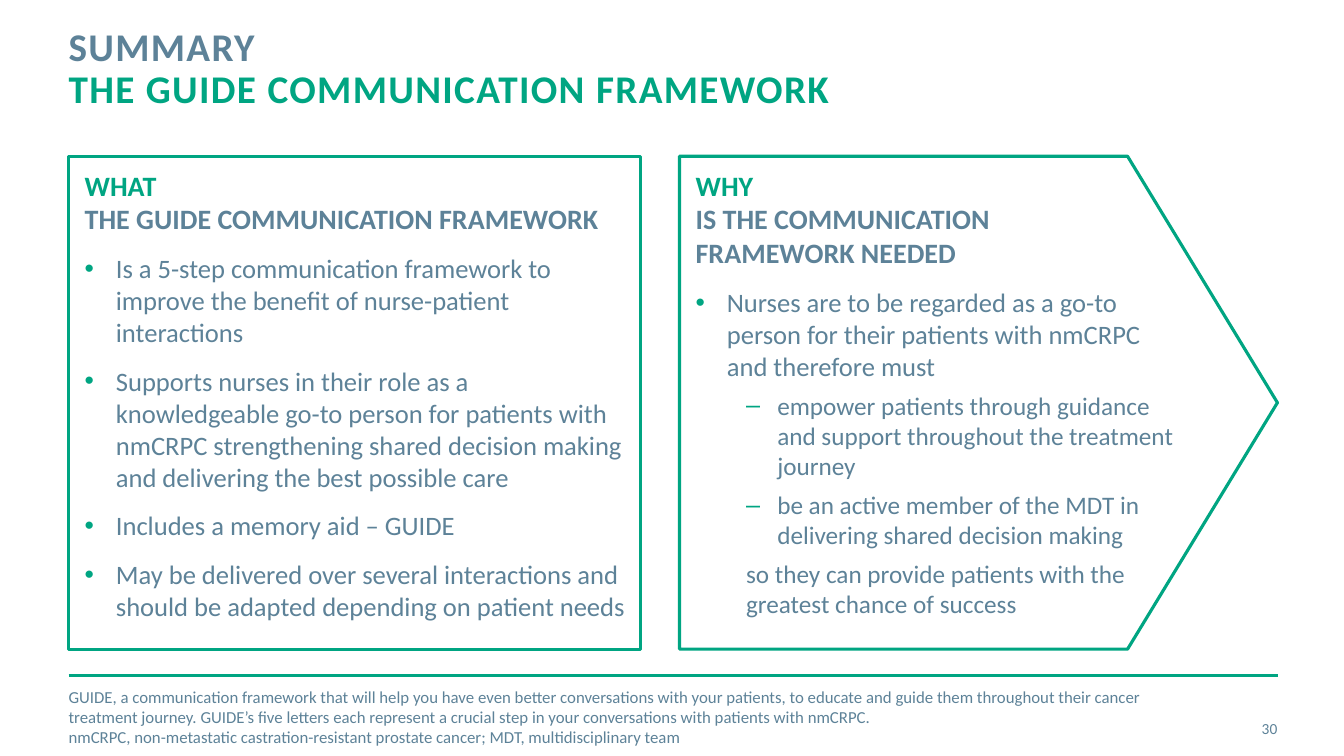
"""Build the summary slide of the GUIDE communication framework."""
from dataclasses import dataclass
from typing import Optional

from lxml import etree
from pptx import Presentation
from pptx import util as u
from pptx.dml.color import RGBColor
from pptx.enum import shapes, text
from pptx.oxml import ns

GREEN, SLATE, WHITE = "00A582", "5D8298", "FFFFFF"
FONT = "Calibri"


@dataclass
class Para:
    words: str
    size: float
    level: int = 0
    left: float = 0
    hang: float = 0
    before: float = 0
    mark: str = ""
    lead: str = ""
    bold: bool = False
    pitch: Optional[float] = None
    track: int = 0
    align: text.PP_ALIGN = text.PP_ALIGN.LEFT


@dataclass
class Box:
    left: float
    top: float
    width: float
    height: float
    pads: tuple[float, float, float, float] = (0, 0, 0, 0)
    anchor: text.MSO_ANCHOR = text.MSO_ANCHOR.TOP


def paint(target, code: str) -> None:
    if hasattr(target, "solid"):
        target.solid()
        target = target.fore_color
    else:
        target = target.color
    target.rgb = RGBColor.from_string(code)


def tag(parent, name: str, **attrs: str):
    return etree.SubElement(parent, ns.qn(name), attrs)


def write_lines(para, words: str, code: str, track: int) -> None:
    for index, line in enumerate(words.split("\n")):
        if index:
            para.add_line_break()
        run = para.add_run()
        run.text = line
        if code:
            paint(run.font, code)
        if track:
            run.font._element.set("spc", str(track))


def write_para(para, item: Para) -> None:
    para.level = item.level
    para.alignment = item.align
    para.space_before = u.Pt(item.before)
    para.space_after = u.Pt(0)
    para.line_spacing = u.Pt(item.pitch) if item.pitch else 1.0
    props = para._p.get_or_add_pPr()
    props.set("marL", str(u.Inches(item.left)))
    props.set("indent", str(-u.Inches(item.hang)))
    if item.mark:
        tag(tag(props, "a:buClr"), "a:srgbClr", val=GREEN)
        tag(props, "a:buFont", typeface="Arial")
        tag(props, "a:buChar", char=item.mark)
    else:
        tag(props, "a:buNone")
    font = para.font
    font.name, font.size, font.bold = FONT, u.Pt(item.size), item.bold
    if item.lead:
        first, second = (SLATE, GREEN) if item.track else (GREEN, SLATE)
        write_lines(para, item.lead, first, item.track)
        para.add_line_break()
        write_lines(para, item.words, second, item.track)
    else:
        paint(font, SLATE)
        write_lines(para, item.words, "", item.track)


def fill_box(shape, box: Box, items: list[Para]) -> None:
    shape.left, shape.top = u.Inches(box.left), u.Inches(box.top)
    shape.width, shape.height = u.Inches(box.width), u.Inches(box.height)
    frame = shape.text_frame
    frame.word_wrap = True
    frame.auto_size = text.MSO_AUTO_SIZE.NONE
    frame.vertical_anchor = box.anchor
    (frame.margin_left, frame.margin_top,
     frame.margin_right, frame.margin_bottom) = map(u.Inches, box.pads)
    for index, item in enumerate(items):
        para = frame.add_paragraph() if index else frame.paragraphs[0]
        write_para(para, item)


def edge(shape) -> None:
    paint(shape.line, GREEN)
    shape.line.width = u.Pt(2.25)


def head(lead: str, words: str) -> Para:
    return Para(words, 20, lead=lead, bold=True)


def point(words: str) -> Para:
    return Para(words, 19, left=0.31, hang=0.31, before=12, mark="•")


def dash(words: str) -> Para:
    return Para(words, 18, level=1, left=0.81, hang=0.31, before=6, mark="–")


TITLE = [Para("THE GUIDE COMMUNICATION FRAMEWORK", 28, lead="SUMMARY",
              bold=True, pitch=30, track=100)]
WHAT = [
    head("WHAT", "THE GUIDE COMMUNICATION FRAMEWORK"),
    point("Is a 5-step communication framework to improve the benefit of "
          "nurse-patient interactions"),
    point("Supports nurses in their role as a knowledgeable go-to person for "
          "patients with nmCRPC strengthening shared decision making and "
          "delivering the best possible care"),
    point("Includes a memory aid – GUIDE"),
    point("May be delivered over several interactions and should be adapted "
          "depending on patient needs"),
]
WHY = [
    head("WHY", "IS THE COMMUNICATION\nFRAMEWORK NEEDED"),
    point("Nurses are to be regarded as a go-to\nperson for their patients "
          "with nmCRPC\nand therefore must"),
    dash("empower patients through guidance and support throughout the "
         "treatment journey"),
    dash("be an active member of the MDT in delivering shared decision making"),
    Para("so they can provide patients with the greatest chance of success",
         18, level=1, left=0.5, before=6),
]
NOTES = [
    Para("GUIDE, a communication framework that will help you have even better "
         "conversations with your patients, to educate and guide them "
         "throughout their cancer treatment journey. GUIDE’s five letters each "
         "represent a crucial step in your conversations with patients with "
         "nmCRPC.", 12),
    Para("nmCRPC, non-metastatic castration-resistant prostate cancer; "
         "MDT, multidisciplinary team", 12),
]
PAGE = [Para("30", 11, align=text.PP_ALIGN.RIGHT)]


def main() -> None:
    deck = Presentation()
    deck.slide_width, deck.slide_height = u.Inches(13.33), u.Inches(7.5)
    slide = deck.slides.add_slide(deck.slide_layouts[3])
    title, what, notes = slide.placeholders
    middle = text.MSO_ANCHOR.MIDDLE

    rule = slide.shapes.add_connector(
        shapes.MSO_CONNECTOR.STRAIGHT,
        u.Inches(0.68), u.Inches(6.7), u.Inches(12.68), u.Inches(6.7))
    paint(rule.line, GREEN)
    rule.line.width = u.Pt(2)
    tag(rule._element.spPr, "a:effectLst")

    fill_box(title, Box(0.68, 0.27, 9.56, 0.88), TITLE)
    fill_box(what, Box(0.68, 1.55, 5.67, 4.89, (0.16, 0.12, 0.08, 0)), WHAT)
    edge(what)
    fill_box(notes, Box(0.68, 6.91, 11.32, 0.4, anchor=middle), NOTES)

    why = slide.shapes.add_shape(shapes.MSO_SHAPE.PENTAGON, 0, 0, 0, 0)
    why.shadow.inherit = False
    why.adjustments[0] = 0.304
    paint(why.fill, WHITE)
    edge(why)
    fill_box(why, Box(6.74, 1.55, 5.93, 4.89, (0.16, 0.12, 0.1, 0.05)), WHY)

    page = slide.shapes.add_textbox(0, 0, 0, 0)
    fill_box(page, Box(11.81, 7.03, 0.86, 0.4, anchor=middle), PAGE)
    deck.save("out.pptx")


if __name__ == "__main__":
    main()
